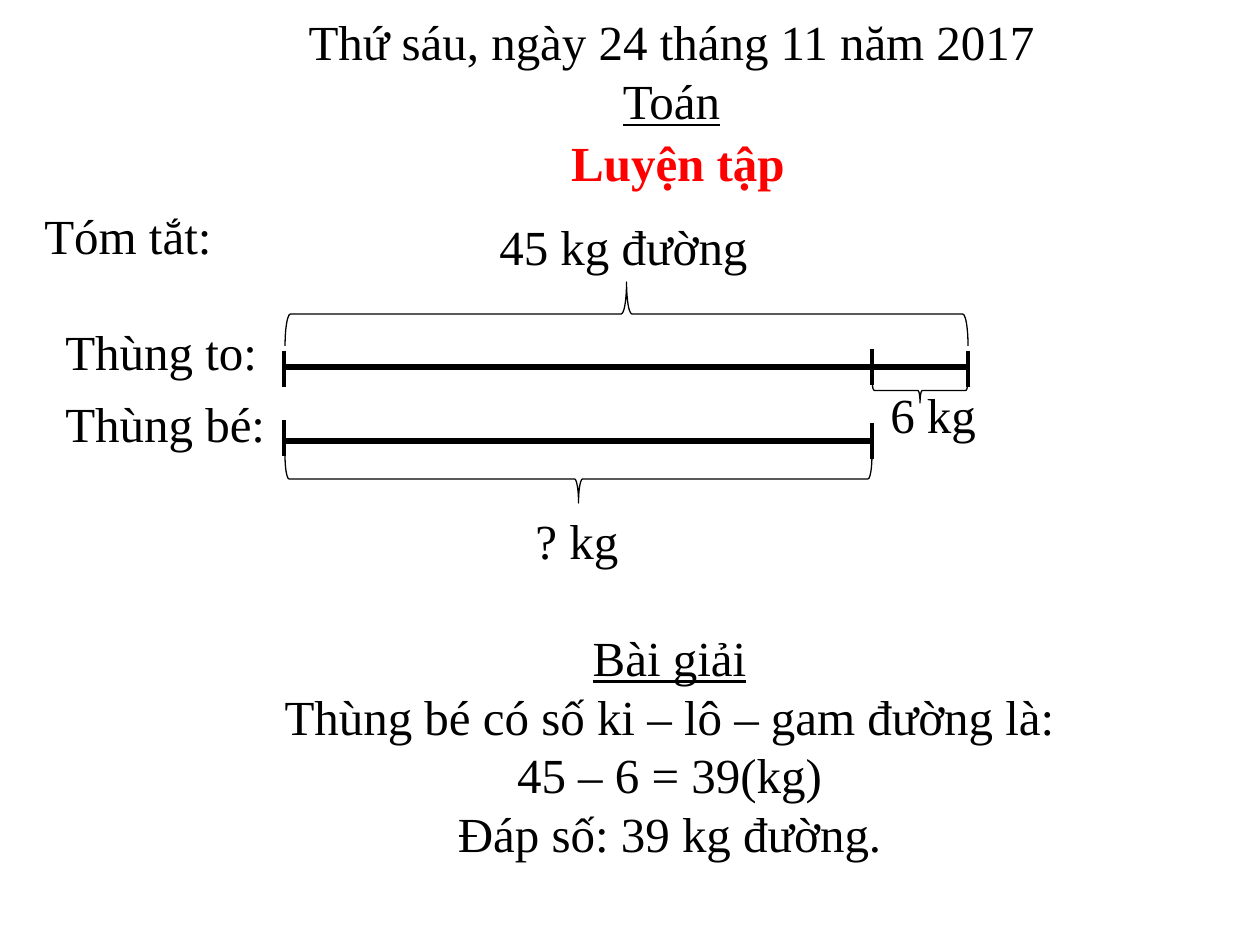
from pptx import Presentation
from pptx.dml.color import RGBColor
from pptx.enum.shapes import MSO_CONNECTOR, MSO_SHAPE
from pptx.enum.text import MSO_ANCHOR, MSO_AUTO_SIZE, PP_ALIGN
from pptx.oxml.ns import qn
from pptx.util import Emu, Pt
from lxml.etree import SubElement

BLACK = RGBColor(0, 0, 0)
RED = RGBColor(255, 0, 0)
SCALE = 914400 / 126
PLAIN = {"name": "Times New Roman", "size": Pt(28), "bold": False, "underline": False}
UNDER = {**PLAIN, "underline": True}
BOLD = {**PLAIN, "bold": True}
FIT = {"word_wrap": False, "auto_size": MSO_AUTO_SIZE.SHAPE_TO_FIT_TEXT}
FIXED = {"word_wrap": True, "auto_size": MSO_AUTO_SIZE.NONE,
         "vertical_anchor": MSO_ANCHOR.MIDDLE}


def px(*nums):
    return [Emu(round(n * SCALE)) for n in nums]


def apply(item, form):
    for key, val in form.items():
        setattr(item, key, val)


def style(run, form, color=BLACK):
    apply(run.font, form)
    run.font.color.rgb = color


def label(slide, box, lines, align=PP_ALIGN.LEFT, color=BLACK):
    frame = slide.shapes.add_textbox(*px(*box)).text_frame
    apply(frame, FIT)
    for i, (text, form) in enumerate(lines):
        para = frame.add_paragraph() if i else frame.paragraphs[0]
        para.alignment = align
        run = para.add_run()
        run.text = text
        style(run, form, color)


def stroke(slide, start, end, width):
    line = slide.shapes.add_connector(MSO_CONNECTOR.STRAIGHT, *px(*start, *end))
    line.line.color.rgb = BLACK
    line.line.width = Pt(width)
    SubElement(line._element.spPr, qn("a:effectLst"))


def brace(slide, kind, box):
    x, y, w, h = box
    left, top = x + (w - h) / 2, y + (h - w) / 2
    shape = slide.shapes.add_shape(kind, *px(left, top, h, w))
    shape.rotation = 90
    shape.shadow.inherit = False
    shape.fill.background()
    shape.line.color.rgb = BLACK
    shape.line.width = Pt(0.75)


def header(slide, box):
    x, y, w, h = box
    title = slide.shapes.title
    apply(title, dict(zip(("left", "top", "width", "height"), px(*box))))
    frame = title.text_frame
    apply(frame, FIXED)
    para = frame.paragraphs[0]
    para.alignment = PP_ALIGN.CENTER
    date = para.add_run()
    date.text = "Thứ sáu, ngày 24 tháng 11 năm 2017"
    style(date, PLAIN)
    para.add_line_break()
    topic = para.add_run()
    topic.text = "Toán"
    style(topic, UNDER)
    label(slide, (x + 421, y + 157, 242, 72), [("Luyện tập", BOLD)],
          PP_ALIGN.CENTER, RED)


def diagram(slide, box):
    x, y, w, h = box
    start, split, end = x + 252, x + 840, x + w
    large, small = y + 168, y + 242
    notes = [
        ("Tóm tắt:", 0, 0, 194),
        ("Thùng to:", 21, 116, 232),
        ("Thùng bé:", 21, 188, 239),
        ("45 kg đường", 455, 11, 276),
        ("6 kg", 846, 179, 112),
        ("? kg", 491, 305, 110),
    ]
    for text, dx, dy, wide in notes:
        label(slide, (x + dx, y + dy, wide, 72), [(text, PLAIN)])
    for stop, row in ((end, large), (split, small)):
        stroke(slide, (start, row), (stop, row), 3)
    ticks = [(start, large - 16), (split, large - 18), (end, large - 16),
             (start, small - 21), (split, small - 18)]
    for tx, ty in ticks:
        stroke(slide, (tx, ty), (tx, ty + 36), 2.25)
    brace(slide, MSO_SHAPE.LEFT_BRACE, (start + 1, y + 83, end - start - 1, 64))
    brace(slide, MSO_SHAPE.RIGHT_BRACE, (split, y + 179, end - split, 25))
    brace(slide, MSO_SHAPE.RIGHT_BRACE, (start + 1, y + 256, split - start - 1, 48))


def answer(slide, box):
    label(slide, box, [
        ("Bài giải", UNDER),
        ("Thùng bé có số ki – lô – gam đường là:", PLAIN),
        ("45 – 6 = 39(kg)", PLAIN),
        ("Đáp số: 39 kg đường.", PLAIN),
    ], PP_ALIGN.CENTER)


def main():
    deck = Presentation()
    deck.slide_width, deck.slide_height = px(1260, 945)
    slide = deck.slides.add_slide(deck.slide_layouts[5])
    header(slide, (136, -31, 1071, 203))
    diagram(slide, (32, 199, 936, 377))
    answer(slide, (268, 621, 803, 251))
    deck.save("out.pptx")


if __name__ == "__main__":
    main()
